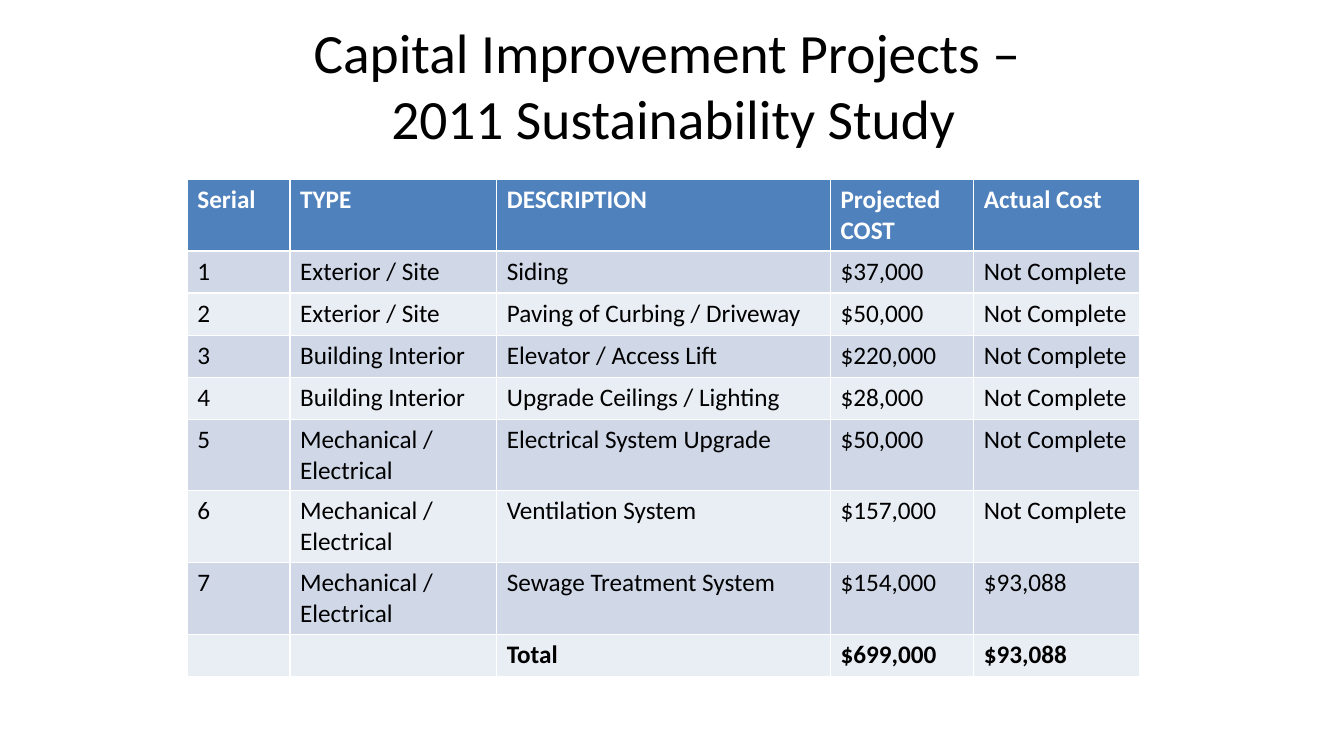
"""Build the capital improvement projects slide."""
from pptx import Presentation
from pptx.dml.color import RGBColor as RGB
from pptx.enum.text import MSO_ANCHOR as Anchor, PP_ALIGN as Align
from pptx.util import Cm, Pt

COLORS = {"header": "4F81BD", "odd": "D0D8E8", "even": "E9EDF4",
          "white": "FFFFFF", "black": "000000"}
FONT = "Calibri"
PENDING = "Not Complete"
SITE = "Exterior / Site"
INTERIOR = "Building Interior"
MECHANICAL = "Mechanical / Electrical"

ROWS = [
    ("Serial", "TYPE", "DESCRIPTION", "Projected COST", "Actual Cost"),
    ("1", SITE, "Siding", "$37,000", PENDING),
    ("2", SITE, "Paving of Curbing / Driveway", "$50,000", PENDING),
    ("3", INTERIOR, "Elevator / Access Lift", "$220,000", PENDING),
    ("4", INTERIOR, "Upgrade Ceilings / Lighting", "$28,000", PENDING),
    ("5", MECHANICAL, "Electrical System Upgrade", "$50,000", PENDING),
    ("6", MECHANICAL, "Ventilation System", "$157,000", PENDING),
    ("7", MECHANICAL, "Sewage Treatment System", "$154,000", "$93,088"),
    ("", "", "Total", "$699,000", "$93,088"),
]
WIDTHS = [2.59, 5.21, 8.41, 3.61, 4.19]
ROW_HEIGHT = 1.06


def style(p, size, color, bold=False):
    p.font.name = FONT
    p.font.size = Pt(size)
    p.font.bold = bold
    p.font.color.rgb = RGB.from_string(COLORS[color])


prs = Presentation()
prs.slide_width, prs.slide_height = Cm(33.87), Cm(19.05)
s = prs.slides.add_slide(prs.slide_layouts[5])

title = s.shapes.title
title.left, title.top, title.width, title.height = Cm(5.54), Cm(0.53), Cm(22.86), Cm(3.18)
tf = title.text_frame
tf.word_wrap = True
tf.vertical_anchor = Anchor.MIDDLE
p = tf.paragraphs[0]
p.text = "Capital Improvement Projects – \v2011 Sustainability Study"
p.alignment = Align.CENTER
style(p, 39.6, "black")

table = s.shapes.add_table(len(ROWS), len(WIDTHS), Cm(4.72), Cm(4.52),
                           Cm(sum(WIDTHS)), Cm(ROW_HEIGHT * len(ROWS))).table
for col, width in zip(table.columns, WIDTHS):
    col.width = Cm(width)

for i, values in enumerate(ROWS):
    table.rows[i].height = Cm(ROW_HEIGHT)
    fill = "header" if i == 0 else "odd" if i % 2 else "even"
    for j, value in enumerate(values):
        cell = table.cell(i, j)
        cell.fill.solid()
        cell.fill.fore_color.rgb = RGB.from_string(COLORS[fill])
        p = cell.text_frame.paragraphs[0]
        p.text = value
        style(p, 18, "white" if i == 0 else "black", i in (0, len(ROWS) - 1))

prs.save("out.pptx")
